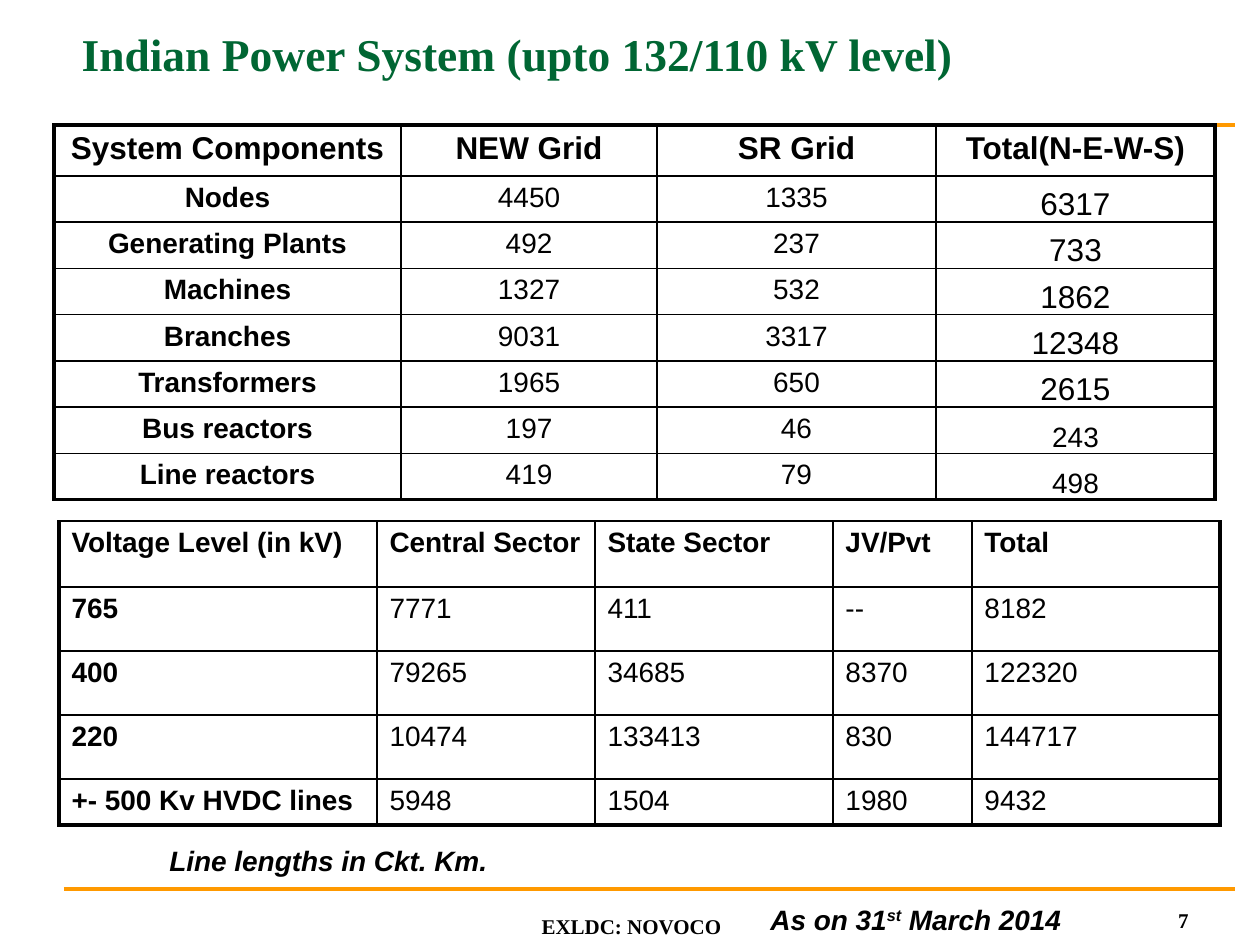
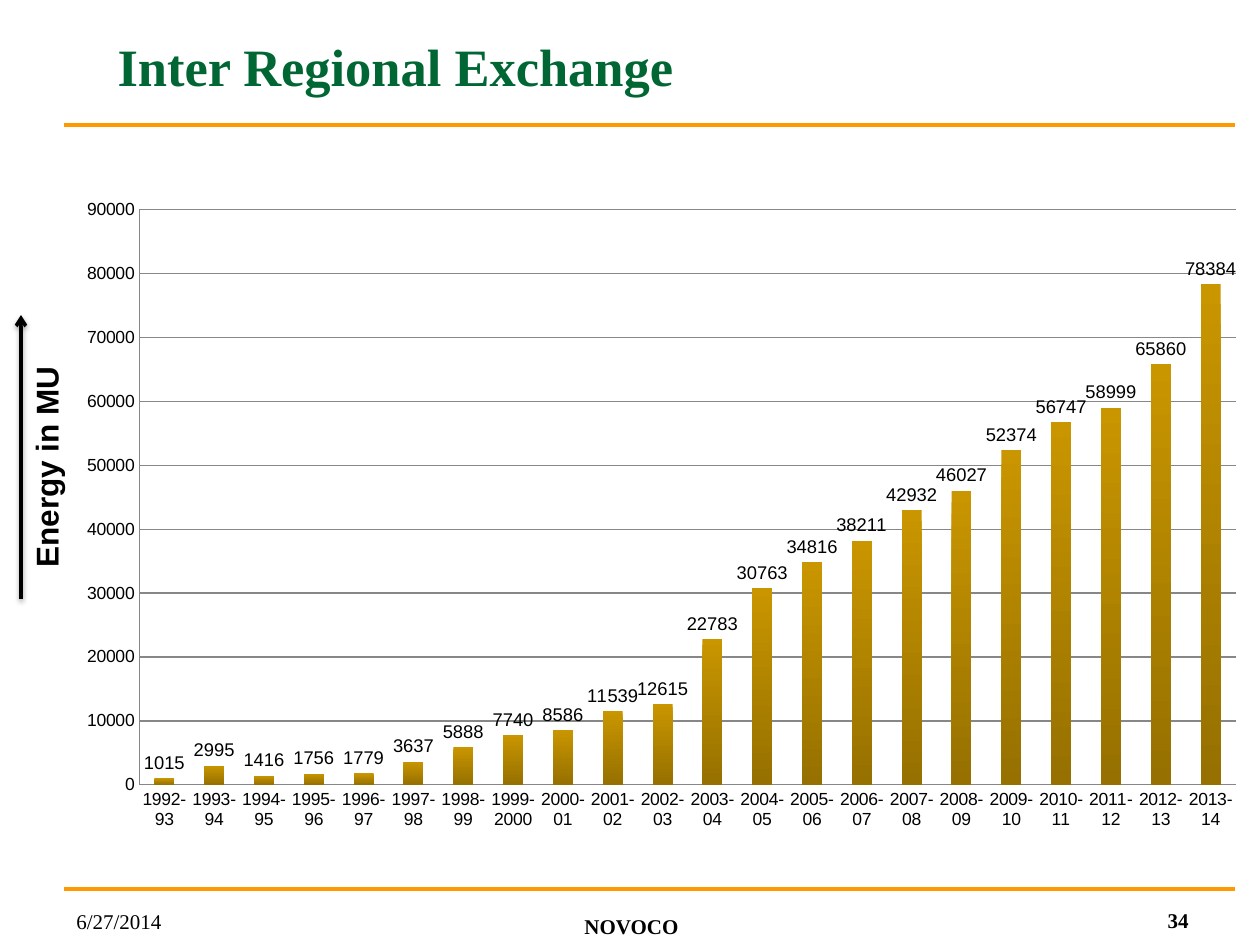
import pptx
import pptx.chart.data
import pptx.dml.color
import pptx.enum.chart
import pptx.enum.shapes
import pptx.enum.text
import pptx.oxml
import pptx.oxml.ns
import pptx.util

RGB = pptx.dml.color.RGBColor
BLACK = RGB(0x00, 0x00, 0x00)
GREEN = RGB(0x00, 0x66, 0x33)
ORANGE = RGB(0xFF, 0x99, 0x00)
GREY = RGB(0x87, 0x87, 0x87)
GOLD = RGB(0xC9, 0x96, 0x00)
BROWN = RGB(0x96, 0x70, 0x00)

SANS, SERIF = "Arial", "Times New Roman"
Pt = pptx.util.Pt
ALIGN = pptx.enum.text.PP_ALIGN
ANCHOR = pptx.enum.text.MSO_ANCHOR
NONE = pptx.enum.text.MSO_AUTO_SIZE.NONE
NS = pptx.oxml.ns.nsdecls("a")
THIN, THICK = Pt(1), Pt(2.25)
FOOT = {"name": SERIF, "size": Pt(12), "bold": True}
NOTE = {"name": SANS, "size": Pt(16), "bold": True, "italic": True}

GRID = [
    ("System Components", "NEW Grid", "SR Grid", "Total(N-E-W-S)"),
    ("Nodes", "4450", "1335", "6317"),
    ("Generating Plants", "492", "237", "733"),
    ("Machines", "1327", "532", "1862"),
    ("Branches", "9031", "3317", "12348"),
    ("Transformers", "1965", "650", "2615"),
    ("Bus reactors", "197", "46", "243"),
    ("Line reactors", "419", "79", "498"),
]
LINES = [
    ("Voltage Level (in kV)", "Central Sector", "State Sector", "JV/Pvt", "Total"),
    ("765", "7771", "411", "--", "8182"),
    ("400", "79265", "34685", "8370", "122320"),
    ("220", "10474", "133413", "830", "144717"),
    ("+- 500 Kv HVDC lines", "5948", "1504", "1980", "9432"),
]
ENERGY = [1015, 2995, 1416, 1756, 1779, 3637, 5888, 7740, 8586, 11539, 12615,
          22783, 30763, 34816, 38211, 42932, 46027, 52374, 56747, 58999,
          65860, 78384]


def px(n):
    return round(n * 914400 / 126)


def put(item, **vals):
    for key, val in vals.items():
        setattr(item, key, val)


def ink(font, look, color=BLACK):
    put(font, **look)
    font.color.rgb = color


def write(frame, text, look, align=ALIGN.LEFT, color=BLACK):
    para = frame.paragraphs[0]
    para.alignment = align
    runs = [text] if isinstance(text, str) else text
    for part in runs:
        run = para.add_run()
        run.text = part
        ink(run.font, look, color)
    return para.runs


def label(slide, box, text, look, align=ALIGN.LEFT, anchor=ANCHOR.TOP):
    shape = slide.shapes.add_textbox(*map(px, box))
    put(shape.text_frame, word_wrap=True, vertical_anchor=anchor)
    return shape, write(shape.text_frame, text, look, align)


def rule(slide, start, end, color, width, effect=""):
    kind = pptx.enum.shapes.MSO_CONNECTOR.STRAIGHT
    line = slide.shapes.add_connector(kind, *map(px, start + end))
    line.line.color.rgb = color
    line.line.width = width
    line.element.spPr.append(pptx.oxml.parse_xml(
        f"<a:effectLst {NS}>{effect}</a:effectLst>"))
    return line


def base(deck, title, box, size, foot, page):
    slide = deck.slides.add_slide(deck.slide_layouts[5])
    for y in (125, 889):
        rule(slide, (64, y), (1235, y), ORANGE, Pt(2.5))
    head = slide.shapes.title
    put(head, **dict(zip(("left", "top", "width", "height"), map(px, box))))
    put(head.text_frame, word_wrap=True, auto_size=NONE,
        vertical_anchor=ANCHOR.MIDDLE)
    write(head.text_frame, title,
          {"name": SERIF, "size": Pt(size), "bold": True}, color=GREEN)
    label(slide, (432, 900, 399, 45), foot, FOOT, ALIGN.CENTER, ANCHOR.BOTTOM)
    label(slide, (907, 890, 294, 49), page, FOOT, ALIGN.RIGHT, ANCHOR.BOTTOM)
    return slide


def edge(cell, sides):
    props = cell._tc.get_or_add_tcPr()
    for side, width in sides.items():
        props.append(pptx.oxml.parse_xml(
            f'<a:ln{side} {NS} w="{width}"><a:solidFill>'
            f'<a:srgbClr val="{BLACK}"/></a:solidFill></a:ln{side}>'))
    cell.fill.background()


def table(slide, spot, cols, rows, data, top, look):
    box = (*spot, sum(cols), sum(rows))
    grid = slide.shapes.add_table(len(rows), len(cols), *map(px, box)).table
    put(grid, first_row=False, horz_banding=False)
    for col, width in zip(grid.columns, cols):
        col.width = px(width)
    for row, height in zip(grid.rows, rows):
        row.height = px(height)
    for r, texts in enumerate(data):
        for c, text in enumerate(texts):
            cell = grid.cell(r, c)
            edge(cell, {
                "L": THIN if c else THICK,
                "R": THICK if c == len(cols) - 1 else THIN,
                "T": THIN if r else top,
                "B": THICK if r == len(rows) - 1 else THIN})
            size, align = look(cell, r, c)
            write(cell.text_frame, text,
                  {"name": SANS, "size": Pt(size), "bold": r == 0 or c == 0},
                  align)


def part(cell, r, c):
    total = r > 0 and c == 3
    if total:
        put(cell, margin_left=px(1), margin_right=px(1), margin_top=px(1),
            margin_bottom=0, vertical_anchor=ANCHOR.BOTTOM)
    return 18 if r == 0 or total and r < 6 else 16, ALIGN.CENTER


def plain(cell, r, c):
    return 16, ALIGN.LEFT


def system(deck):
    slide = base(deck, "Indian Power System (upto 132/110 kV level)",
                 (69, 0, 1170, 107), 26, "EXLDC: NOVOCO", "7")
    table(slide, (54, 125), (347, 256, 279, 279), [51] + [46] * 7,
          GRID, THICK, part)
    table(slide, (59, 521), (318, 218, 238, 139, 248), [66] + [64] * 3 + [46],
          LINES, THIN, plain)
    runs = label(slide, (758, 896, 374, 47),
                 ("As on 31", "st", " March 2014"), NOTE)[1]
    runs[1]._r.get_or_add_rPr().set("baseline", "30000")
    label(slide, (157, 837, 374, 47), "Line lengths in Ckt. Km.", NOTE)


def years():
    for year in range(1992, 2014):
        end = year + 1
        yield f"{year}-{end if end == 2000 else f'{end % 100:02}'}"


def bars(slide, box):
    data = pptx.chart.data.CategoryChartData()
    data.categories = list(years())
    data.add_series("Series 1", ENERGY)
    enum = pptx.enum.chart
    chart = slide.shapes.add_chart(
        enum.XL_CHART_TYPE.COLUMN_CLUSTERED, *map(px, box), data).chart
    put(chart, has_legend=False, has_title=False)
    ink(chart.font, {"name": SANS, "size": Pt(10)})
    put(chart.value_axis, minimum_scale=0, maximum_scale=90000,
        major_unit=10000, has_major_gridlines=True)
    for axis in (chart.value_axis, chart.category_axis):
        put(axis, major_tick_mark=enum.XL_TICK_MARK.NONE)
        axis.format.line.color.rgb = GREY
    chart.value_axis.major_gridlines.format.line.color.rgb = GREY
    plot = chart.plots[0]
    put(plot, gap_width=150, vary_by_categories=False, has_data_labels=True)
    put(plot.data_labels, show_value=True,
        position=enum.XL_LABEL_POSITION.OUTSIDE_END)
    ink(plot.data_labels.font, {"name": SANS, "size": Pt(10.5)})
    fill = plot.series[0].format.fill
    fill.gradient()
    fill.gradient_angle = 270
    for stop, color in zip(fill.gradient_stops, (GOLD, BROWN)):
        stop.color.rgb = color
    area = chart._chartSpace.chart.plotArea
    for old in area.findall(pptx.oxml.ns.qn("c:layout")):
        area.remove(old)
    sizes = {"x": 0.08, "y": 0.03, "w": 0.9, "h": 0.83}
    modes = "".join(f'<c:{k}Mode val="edge"/>' for k in "xy")
    marks = "".join(f'<c:{k} val="{v}"/>' for k, v in sizes.items())
    area.insert(0, pptx.oxml.parse_xml(
        f'<c:layout {pptx.oxml.ns.nsdecls("c")}><c:manualLayout>'
        f'<c:layoutTarget val="inner"/>{modes}{marks}'
        '</c:manualLayout></c:layout>'))


def trade(deck):
    slide = base(deck, "Inter Regional Exchange", (105, 42, 1134, 47), 30,
                 "NOVOCO", "34")
    label(slide, (64, 900, 294, 40), "6/27/2014", {**FOOT, "bold": False},
          anchor=ANCHOR.BOTTOM)
    bars(slide, (42, 189, 1218, 693))
    side = label(slide, (-87, 422, 266, 50), "Energy in MU",
                 {"name": SANS, "size": Pt(18), "bold": True})[0]
    side.rotation = 270
    shade = (f'<a:outerShdw blurRad="{Pt(3.1)}" dist="{Pt(1.6)}" dir="5400000">'
             f'<a:srgbClr val="{BLACK}"><a:alpha val="38000"/></a:srgbClr>'
             '</a:outerShdw>')
    arrow = rule(slide, (21, 599), (21, 315), BLACK, Pt(2), shade)
    arrow.line._get_or_add_ln().append(
        pptx.oxml.parse_xml(f'<a:tailEnd {NS} type="arrow"/>'))


def main():
    deck = pptx.Presentation()
    put(deck, slide_width=px(1260), slide_height=px(945))
    system(deck)
    trade(deck)
    deck.save("out.pptx")


if __name__ == "__main__":
    main()
